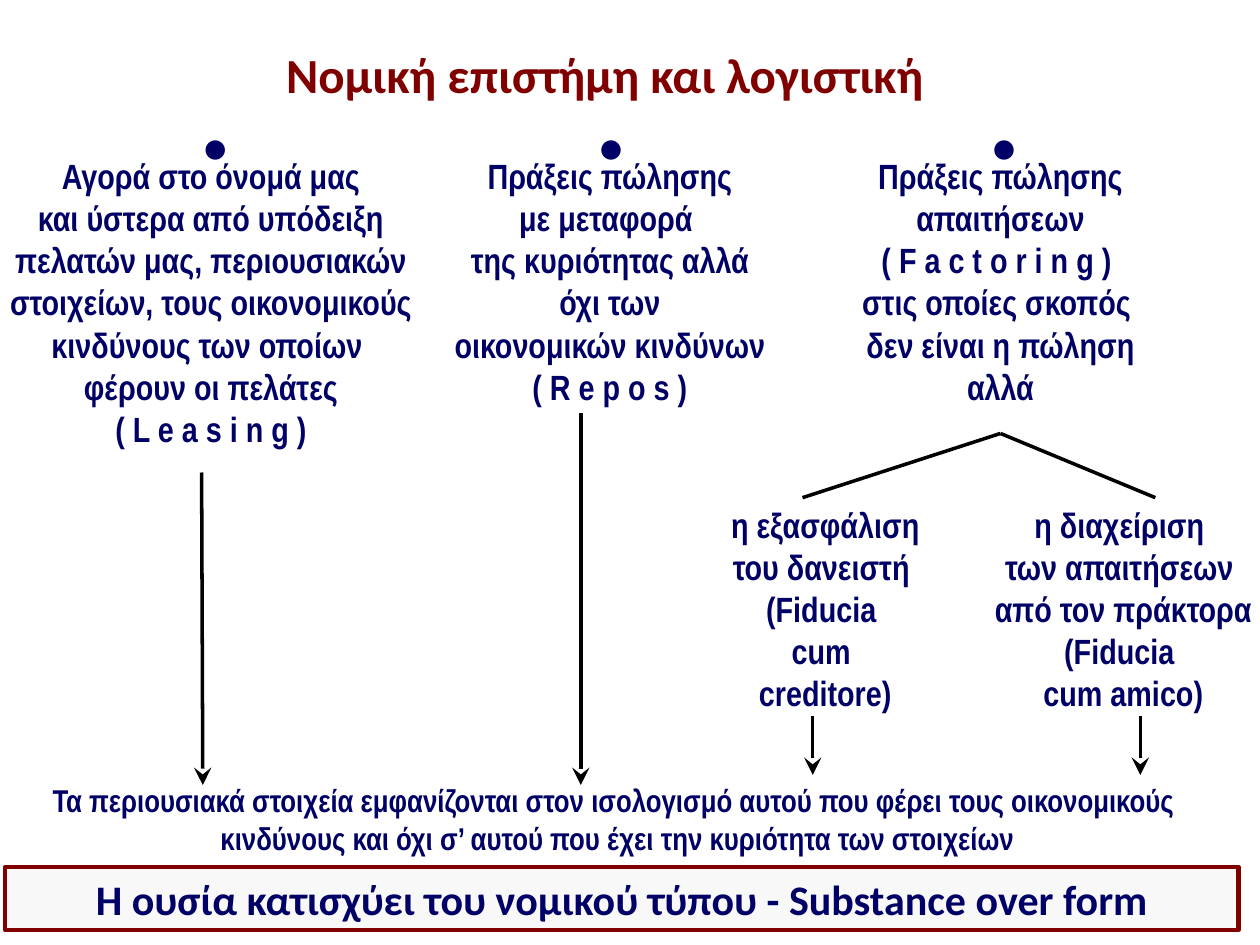
from dataclasses import dataclass

from lxml import etree
from pptx import Presentation
from pptx.dml.color import RGBColor
from pptx.enum.shapes import MSO_CONNECTOR, MSO_SHAPE
from pptx.enum.text import MSO_ANCHOR, MSO_AUTO_SIZE, PP_ALIGN
from pptx.oxml.ns import qn
from pptx.util import Pt

LINE, RECT = MSO_CONNECTOR.STRAIGHT, MSO_SHAPE.RECTANGLE
TOP, FIT = MSO_ANCHOR.TOP, MSO_AUTO_SIZE.SHAPE_TO_FIT_TEXT
LEFT, MID = PP_ALIGN.LEFT, PP_ALIGN.CENTER
NAVY, MAROON, BLACK, PALE = "000066", "800000", "000000", "F8F8F8"
HEAD, BODY = "Calibri", "Arial Narrow"
ROW, LEAF, DOT = 85, 284.4, 65.5


@dataclass
class Block:
    """Centred text box; each item of paras is one paragraph."""
    left: float
    top: float
    width: float
    height: float
    paras: list[str]
    size: float = 20
    wrap: bool = False


@dataclass
class Arrow:
    x: float
    top: float
    end_x: float
    end: float


BLOCKS = [
    Block(410.4, LEAF, 122.4, 127.4,
          ["η εξασφάλιση\nτου δανειστή \n(Fiducia \ncum \ncreditore)"]),
    Block(560.9, LEAF, 162, 127.4,
          ["η διαχείριση ",
           "των απαιτήσεων \nαπό τον πράκτορα\n(Fiducia \ncum amico)"]),
    Block(-2.2, ROW, 245.5, 175,
          ["Αγορά στο όνομά μας\nκαι ύστερα από υπόδειξη\n"
           "πελατών μας, περιουσιακών\nστοιχείων, τους οικονομικούς\n"
           "κινδύνους των οποίων \nφέρουν οι πελάτες\n( L e a s i n g )"]),
    Block(252, ROW, 193, 151.2,
          ["Πράξεις πώλησης\nμε μεταφορά \nτης κυριότητας αλλά\nόχι των",
           "οικονομικών κινδύνων\n( R e p o s )"]),
    Block(484.6, ROW, 174.2, 151.2,
          ["Πράξεις πώλησης\nαπαιτήσεων\n( F a c t o r i n g ) \n"
           "στις οποίες σκοπός \nδεν είναι η πώληση\nαλλά"]),
    Block(0, 442.8, 705.6, 51.1,
          ["Τα περιουσιακά στοιχεία εμφανίζονται στον ισολογισμό αυτού "
           "που φέρει τους οικονομικούς \nκινδύνους και όχι σ’ αυτού που "
           "έχει την κυριότητα των στοιχείων"], 18, True),
]
DOTS = [108.7, 334.8, 559.4]
ARROWS = [
    Arrow(115.2, 270, 115.9, 448.6),
    Arrow(331.9, 236.2, 331.9, 448.6),
    Arrow(464.4, 409, 464.4, 442.8),
    Arrow(651.6, 409, 651.6, 442.8),
]
FORK_X, FORK_TOP, FORK_END = 571.7, 247.7, 284.4
FORK_TIPS = [458.6, 660.2]


def rgb(color: str) -> RGBColor:
    return RGBColor.from_string(color)


def write(shape, *paras: str, size: float = 20, font: str = BODY,
          color: str = NAVY, bold: bool = True, align=MID,
          wrap: bool = True) -> None:
    frame = shape.text_frame
    frame.word_wrap = wrap
    frame.auto_size = FIT
    frame.vertical_anchor = TOP
    for i, text in enumerate(paras):
        para = frame.add_paragraph() if i else frame.paragraphs[0]
        para.text = text
        para.alignment = align
        for run in para.runs:
            run.font.name = font
            run.font.size = Pt(size)
            run.font.bold = bold
            run.font.color.rgb = rgb(color)


def draw_line(shapes, x: float, y: float, end_x: float, end_y: float,
              head: bool = False) -> None:
    line = shapes.add_connector(LINE, Pt(x), Pt(y), Pt(end_x), Pt(end_y))
    line.line.color.rgb = rgb(BLACK)
    line.line.width = Pt(2)
    if head:
        etree.SubElement(line.line._get_or_add_ln(), qn("a:tailEnd"),
                         type="stealth", w="lg", len="lg")
    etree.SubElement(line._element.spPr, qn("a:effectLst"))


def draw_block(shapes, block: Block) -> None:
    box = shapes.add_textbox(Pt(block.left), Pt(block.top),
                             Pt(block.width), Pt(block.height))
    write(box, *block.paras, size=block.size, wrap=block.wrap)


def draw_dot(shapes, left: float) -> None:
    box = shapes.add_textbox(Pt(left), Pt(DOT), Pt(28), Pt(36))
    write(box, "●", size=24, font=HEAD, bold=False, align=LEFT, wrap=False)


def draw_banner(shapes, text: str) -> None:
    box = shapes.add_shape(RECT, Pt(2.9), Pt(495.4), Pt(704.9), Pt(36))
    box.shadow.inherit = False
    box.fill.solid()
    box.fill.fore_color.rgb = rgb(PALE)
    box.line.color.rgb = rgb(MAROON)
    box.line.width = Pt(2.5)
    write(box, text, size=24, font=HEAD)


def main() -> None:
    deck = Presentation()
    deck.slide_width, deck.slide_height = Pt(720), Pt(540)
    shapes = deck.slides.add_slide(deck.slide_layouts[5]).shapes

    title = shapes.title
    title.left, title.top = Pt(36), Pt(21.6)
    title.width, title.height = Pt(619.2), Pt(41)
    write(title, "Νομική επιστήμη και λογιστική",
          size=28, font=HEAD, color=MAROON)

    for block in BLOCKS:
        draw_block(shapes, block)
    for left in DOTS:
        draw_dot(shapes, left)
    fork = shapes.add_group_shape().shapes
    for tip in FORK_TIPS:
        draw_line(fork, FORK_X, FORK_TOP, tip, FORK_END)
    for arrow in ARROWS:
        draw_line(shapes, arrow.x, arrow.top, arrow.end_x, arrow.end, True)
    draw_banner(shapes,
                "Η ουσία κατισχύει του νομικού τύπου - Substance over form")
    deck.save("out.pptx")


if __name__ == "__main__":
    main()
